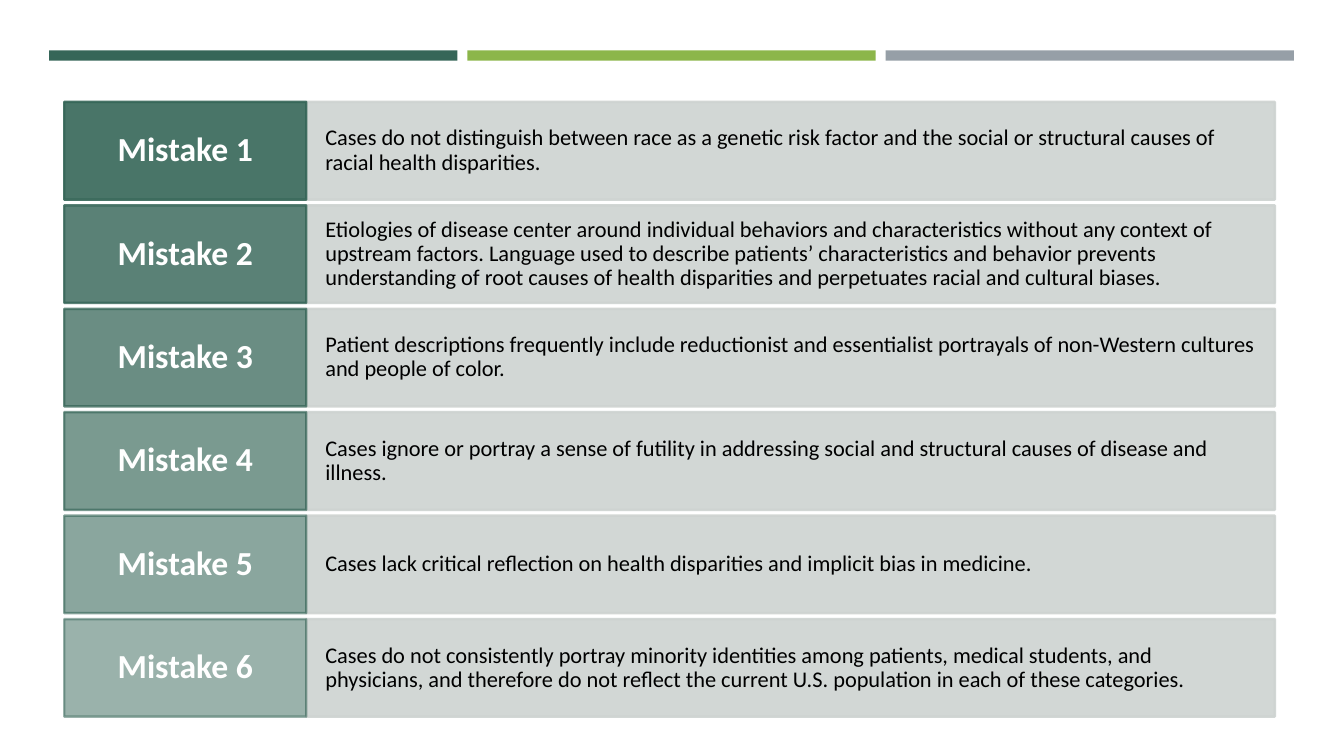
from dataclasses import dataclass

from lxml import etree
from pptx import Presentation
from pptx.dml.color import RGBColor
from pptx.enum.shapes import MSO_SHAPE
from pptx.enum.text import MSO_ANCHOR, PP_ALIGN
from pptx.oxml.ns import qn
from pptx.shapes.autoshape import Shape
from pptx.slide import Slide
from pptx.util import Cm, Pt

RECTANGLE = MSO_SHAPE.RECTANGLE
MIDDLE = MSO_ANCHOR.MIDDLE
LEFT = PP_ALIGN.LEFT
CENTER = PP_ALIGN.CENTER


@dataclass(frozen=True)
class Theme:
    font: str = "Calibri"
    green: str = "366658"
    lime: str = "8CB64A"
    gray: str = "969FA7"
    pale: str = "CED3D1"
    black: str = "000000"
    white: str = "FFFFFF"
    label_size: float = 24
    body_size: float = 16
    outline: float = 1.75


@dataclass(frozen=True)
class Frame:
    left: float
    top: float
    width: float
    height: float


@dataclass(frozen=True)
class CellStyle:
    fill: str
    color: str
    size: float
    bold: bool
    align: PP_ALIGN
    side_inset: float
    end_inset: float


THEME = Theme()
LABEL_STYLE = CellStyle(THEME.green, THEME.white, THEME.label_size, True, CENTER, 0.33, 0.25)
BODY_STYLE = CellStyle(THEME.pale, THEME.black, THEME.body_size, False, LEFT, 0.48, 0.64)

BAR_LEFT, BAR_TOP, BAR_WIDTH, BAR_HEIGHT, BAR_PITCH = 1.24, 1.27, 10.29, 0.26, 10.54
LABEL_LEFT, LABEL_WIDTH, BODY_WIDTH = 1.62, 6.1, 24.41
FIRST_TOP, LAST_TOP, ROW_HEIGHT = 2.57, 15.6, 2.46
FIRST_OPACITY, LAST_OPACITY, BODY_OPACITY = 90, 50, 90

MISTAKES = [
    "Cases do not distinguish between race as a genetic risk factor and the social "
    "or structural causes of racial health disparities.",
    "Etiologies of disease center around individual behaviors and characteristics "
    "without any context of upstream factors. Language used to describe patients’ "
    "characteristics and behavior prevents understanding of root causes of health "
    "disparities and perpetuates racial and cultural biases.",
    "Patient descriptions frequently include reductionist and essentialist portrayals "
    "of non-Western cultures and people of color.",
    "Cases ignore or portray a sense of futility in addressing social and structural "
    "causes of disease and illness.",
    "Cases lack critical reflection on health disparities and implicit bias in medicine.",
    "Cases do not consistently portray minority identities among patients, medical "
    "students, and physicians, and therefore do not reflect the current U.S. "
    "population in each of these categories.",
]


def add_rectangle(page: Slide, frame: Frame, color: str) -> Shape:
    box = page.shapes.add_shape(
        RECTANGLE, Cm(frame.left), Cm(frame.top), Cm(frame.width), Cm(frame.height)
    )
    box.shadow.inherit = False
    box.fill.solid()
    box.fill.fore_color.rgb = RGBColor.from_string(color)
    box.line.fill.background()
    return box


def set_opacity(box: Shape, percent: float) -> None:
    for color in box._element.spPr.iter(qn("a:srgbClr")):
        etree.SubElement(color, qn("a:alpha"), val=str(round(percent * 1000)))


def add_cell(page: Slide, frame: Frame, text: str, style: CellStyle, opacity: float) -> None:
    box = add_rectangle(page, frame, style.fill)
    box.line.color.rgb = RGBColor.from_string(style.fill)
    box.line.width = Pt(THEME.outline)
    set_opacity(box, opacity)

    text_frame = box.text_frame
    text_frame.word_wrap = True
    text_frame.vertical_anchor = MIDDLE
    text_frame.margin_left = text_frame.margin_right = Cm(style.side_inset)
    text_frame.margin_top = text_frame.margin_bottom = Cm(style.end_inset)

    para = text_frame.paragraphs[0]
    para.text = text
    para.alignment = style.align
    para.line_spacing = 0.9
    para.font.name = THEME.font
    para.font.size = Pt(style.size)
    para.font.bold = style.bold
    para.font.color.rgb = RGBColor.from_string(style.color)


def add_bars(page: Slide) -> None:
    for index, color in enumerate((THEME.green, THEME.lime, THEME.gray)):
        left = BAR_LEFT + index * BAR_PITCH
        add_rectangle(page, Frame(left, BAR_TOP, BAR_WIDTH, BAR_HEIGHT), color)


def add_mistakes(page: Slide) -> None:
    for index, mistake in enumerate(MISTAKES):
        progress = index / (len(MISTAKES) - 1)
        top = FIRST_TOP + progress * (LAST_TOP - FIRST_TOP)
        opacity = FIRST_OPACITY + progress * (LAST_OPACITY - FIRST_OPACITY)
        body = Frame(LABEL_LEFT + LABEL_WIDTH, top, BODY_WIDTH, ROW_HEIGHT)
        label = Frame(LABEL_LEFT, top, LABEL_WIDTH, ROW_HEIGHT)
        add_cell(page, body, mistake, BODY_STYLE, BODY_OPACITY)
        add_cell(page, label, f"Mistake {index + 1}", LABEL_STYLE, opacity)


def main() -> None:
    deck = Presentation()
    deck.slide_width, deck.slide_height = Cm(33.87), Cm(19.05)
    page = deck.slides.add_slide(deck.slide_layouts[6])
    add_bars(page)
    add_mistakes(page)
    deck.save("out.pptx")


if __name__ == "__main__":
    main()
